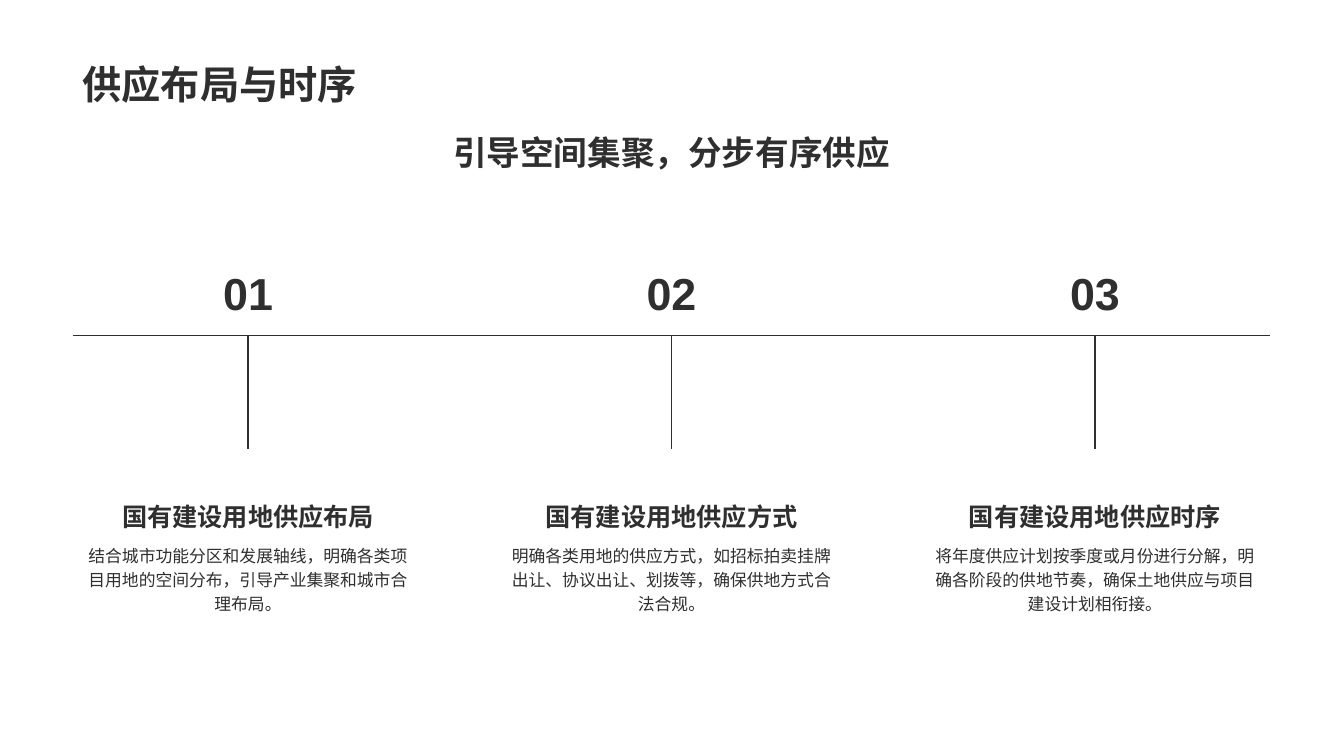
from dataclasses import dataclass

from lxml.etree import SubElement
from pptx import Presentation
from pptx.dml.color import RGBColor
from pptx.enum.shapes import MSO_CONNECTOR
from pptx.enum.text import MSO_ANCHOR as Anchor, MSO_AUTO_SIZE, PP_ALIGN as Align
from pptx.oxml.ns import qn
from pptx.util import Inches, Pt

INK = RGBColor(0x2F, 0x2F, 0x2F)
WHITE = RGBColor(0xFF, 0xFF, 0xFF)
CJK = "Noto Sans CJK SC"
LEFT, WIDTH = 0.72, 11.88
AXIS_Y, STEM_END = 3.33, 4.45
COLUMN_W, COLUMN_STEP = 3.48, 4.2
NUMBER_W = 1.11


@dataclass(frozen=True)
class Stage:
    heading: str
    body: str


@dataclass(frozen=True)
class Style:
    size: int
    bold: bool = True
    font: str = CJK
    align: Align = Align.CENTER
    anchor: Anchor = Anchor.MIDDLE
    spacing: float = 1.0
    wrap: bool = True


TITLE = Style(28, align=Align.LEFT, anchor=Anchor.BOTTOM)
SUBTITLE = Style(24)
NUMBER = Style(32, font="Arial", wrap=False)
HEADING = Style(18, anchor=Anchor.BOTTOM)
BODY = Style(12, bold=False, anchor=Anchor.TOP, spacing=1.2)

STAGES = [
    Stage("国有建设用地供应布局",
          "结合城市功能分区和发展轴线，明确各类项目用地的空间分布，引导产业集聚和城市合理布局。"),
    Stage("国有建设用地供应方式",
          "明确各类用地的供应方式，如招标拍卖挂牌出让、协议出让、划拨等，确保供地方式合法合规。"),
    Stage("国有建设用地供应时序",
          "将年度供应计划按季度或月份进行分解，明确各阶段的供地节奏，确保土地供应与项目建设计划相衔接。"),
]


def write(sp, text: str, style: Style) -> None:
    tf = sp.text_frame
    tf.auto_size = MSO_AUTO_SIZE.NONE
    tf.word_wrap = style.wrap
    tf.vertical_anchor = style.anchor
    p = tf.paragraphs[0]
    p.alignment = style.align
    p.line_spacing = style.spacing
    r = p.add_run()
    r.text = text
    r.font.size = Pt(style.size)
    r.font.bold = style.bold
    r.font.color.rgb = INK
    r.font.name = style.font
    SubElement(r._r.get_or_add_rPr(), qn("a:ea"), typeface=style.font)


def add_text(s, x: float, y: float, w: float, h: float, text: str, style: Style) -> None:
    sp = s.shapes.add_textbox(Inches(x), Inches(y), Inches(w), Inches(h))
    write(sp, text, style)


def add_line(s, x1: float, y1: float, x2: float, y2: float) -> None:
    line = s.shapes.add_connector(
        MSO_CONNECTOR.STRAIGHT, Inches(x1), Inches(y1), Inches(x2), Inches(y2))
    line.line.color.rgb = INK
    line.line.width = Pt(1)
    SubElement(line._element.spPr, qn("a:effectLst"))


def add_stage(s, index: int, stage: Stage) -> None:
    x = LEFT + index * COLUMN_STEP
    center = x + COLUMN_W / 2
    add_line(s, center, AXIS_Y, center, STEM_END)
    add_text(s, x, 4.47, COLUMN_W, 0.85, stage.heading, HEADING)
    add_text(s, x, 5.32, COLUMN_W, 1.39, stage.body, BODY)
    add_text(s, center - NUMBER_W / 2, 2.53, NUMBER_W, 0.75, f"{index + 1:02}", NUMBER)


def main() -> None:
    prs = Presentation()
    prs.slide_width, prs.slide_height = Inches(13.33), Inches(7.5)
    s = prs.slides.add_slide(prs.slide_layouts.get_by_name("Title Only"))
    s.background.fill.solid()
    s.background.fill.fore_color.rgb = WHITE

    title = s.shapes.title
    title.left, title.top = Inches(LEFT), Inches(0.14)
    title.width, title.height = Inches(WIDTH), Inches(0.98)
    write(title, "供应布局与时序", TITLE)

    add_line(s, LEFT, AXIS_Y, LEFT + WIDTH, AXIS_Y)
    add_text(s, LEFT, 1.24, WIDTH, 0.53, "引导空间集聚，分步有序供应", SUBTITLE)
    for index, stage in enumerate(STAGES):
        add_stage(s, index, stage)
    prs.save("out.pptx")


if __name__ == "__main__":
    main()
